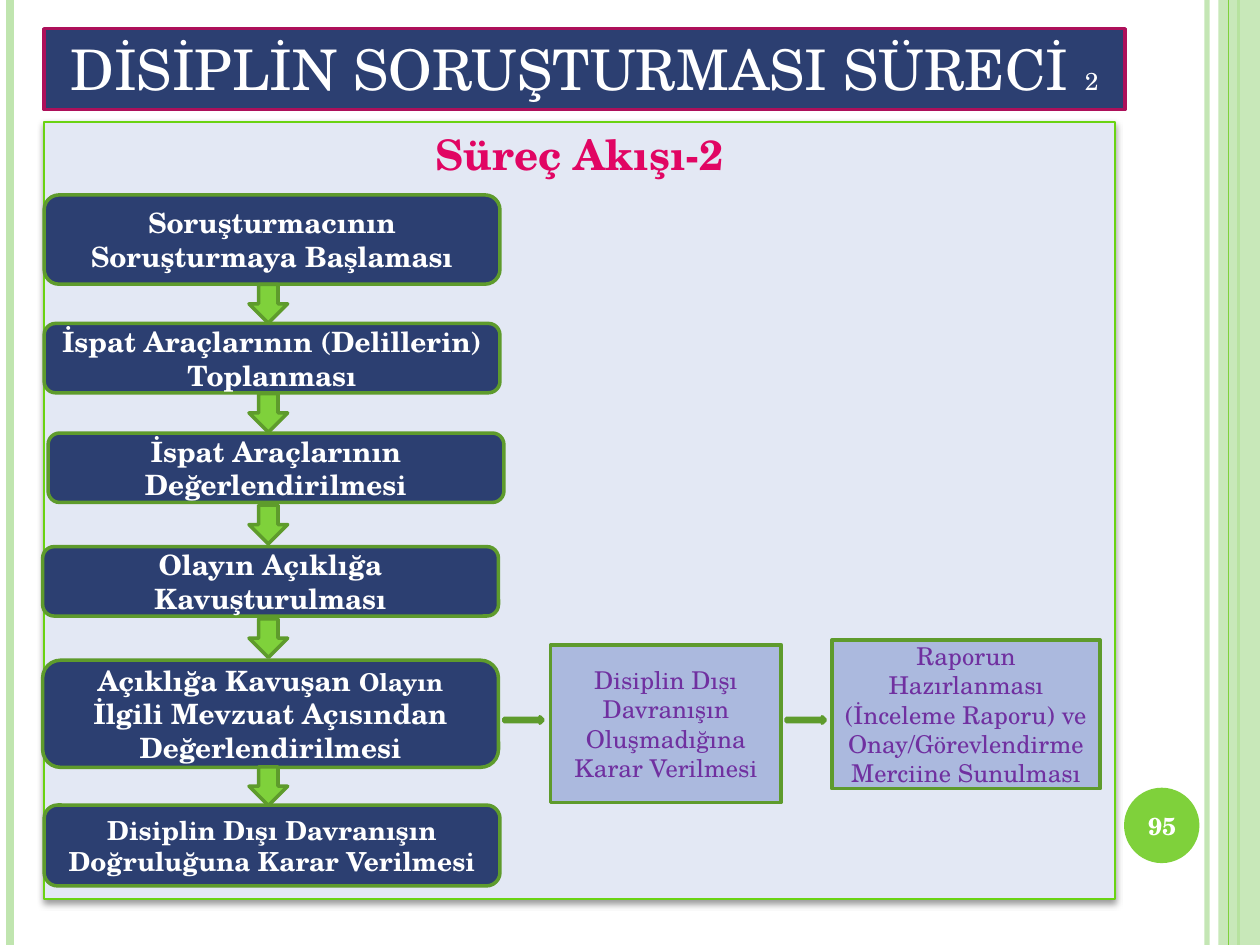
import pptx
import pptx.util
import pptx.dml.color
import pptx.enum.shapes
import pptx.enum.text
import pptx.oxml
import pptx.oxml.ns

Cm, Pt = pptx.util.Cm, pptx.util.Pt
SHAPE = pptx.enum.shapes.MSO_SHAPE
ANCHOR = pptx.enum.text.MSO_ANCHOR
FONT = "TeX Gyre Schola"
COLORS = {
    "white": "FFFFFF", "navy": "2C3F71", "green": "7FD13B", "pale_green": "C0E5AF",
    "dark_green": "5E9B2C", "bright_green": "6AD312", "panel": "E3E8F4",
    "crimson": "AD105A", "pink": "E10563", "light_blue": "ABB9DE", "purple": "7030A0",
}
NS = 'xmlns:a="http://schemas.openxmlformats.org/drawingml/2006/main"'


def rgb(name):
    return pptx.dml.color.RGBColor.from_string(COLORS[name])


def set_alpha(element, percent):
    color = element.find(".//" + pptx.oxml.ns.qn("a:srgbClr"))
    color.append(pptx.oxml.parse_xml(f'<a:alpha {NS} val="{percent * 1000}"/>'))


def add_box(page, kind, box, fill, line=None, width=2):
    shape = page.shapes.add_shape(kind, *(Cm(value) for value in box))
    shape.shadow.inherit = False
    shape.fill.solid()
    shape.fill.fore_color.rgb = rgb(fill)
    if line:
        shape.line.color.rgb = rgb(line)
        shape.line.width = Pt(width)
    else:
        shape.line.fill.background()
    return shape


def write(shape, spans, color, bold=False, anchor=ANCHOR.MIDDLE):
    """Fill a shape with one centred paragraph of (text, size) spans."""
    frame = shape.text_frame
    frame.word_wrap = True
    frame.vertical_anchor = anchor
    para = frame.paragraphs[0]
    para.alignment = pptx.enum.text.PP_ALIGN.CENTER
    for text, size in spans:
        span = para.add_run()
        span.text = text
        span.font.name = FONT
        span.font.size = Pt(size)
        span.font.bold = bold
        span.font.color.rgb = rgb(color)


def add_rule(page, x, height, color, width):
    rule = page.shapes.add_connector(
        pptx.enum.shapes.MSO_CONNECTOR.STRAIGHT, Cm(x), 0, Cm(x), Cm(height))
    rule.line.color.rgb = rgb(color)
    rule.line.width = Pt(width)
    rule._element.spPr.append(pptx.oxml.parse_xml(f"<a:effectLst {NS}/>"))
    return rule


def add_frame(page, width, height):
    """Vertical rules and band along the page edges."""
    set_alpha(add_rule(page, width - 1.07, height, "pale_green", 3)._element, 93)
    add_rule(page, 0.2, height, "pale_green", 4.5)
    add_rule(page, width - 0.43, height, "green", 1.5)
    band = add_box(page, SHAPE.RECTANGLE, (width - 0.84, 0, 0.84, height), "pale_green")
    set_alpha(band._element, 87)
    add_rule(page, width - 0.64, height, "green", 0.75)


def add_page_number(page, box, number):
    add_box(page, SHAPE.OVAL, box, "green")
    left, top, width, height = box
    label = page.shapes.add_textbox(Cm(left - 0.08), Cm(top + 0.04),
                                    Cm(width + 0.18), Cm(height - 0.08))
    write(label, [(number, 14)], "white", bold=True)


def add_title(page, box):
    title = add_box(page, SHAPE.RECTANGLE, box, "navy", "crimson")
    write(title, [("DİSİPLİN SORUŞTURMASI SÜRECİ ", 32), ("2", 14)], "white",
          anchor=ANCHOR.TOP)


def add_panel(page, box):
    panel = add_box(page, SHAPE.RECTANGLE, box, "panel", "bright_green", 1)
    write(panel, [("Süreç Akışı-2", 24)], "pink", bold=True, anchor=ANCHOR.TOP)
    effects = panel._element.spPr.find(pptx.oxml.ns.qn("a:effectLst"))
    effects.append(pptx.oxml.parse_xml(
        f'<a:outerShdw {NS} blurRad="{Pt(4)}" dist="{Pt(2)}" dir="5400000" '
        'rotWithShape="0"><a:srgbClr val="000000"><a:alpha val="40000"/>'
        '</a:srgbClr></a:outerShdw>'))


def add_steps(page, box):
    """Column of process steps with a down arrow centred in each gap."""
    left, top = box[:2]
    arrow_size, arrow_center = 0.78, 4.52
    steps = [  # x offset, y offset, height, spans
        (0, 1.47, 1.8, [("Soruşturmacının Soruşturmaya Başlaması", 16)]),
        (0, 4.06, 1.4, [("İspat Araçlarının (Delillerin) Toplanması", 16)]),
        (0.08, 6.27, 1.4, [("İspat Araçlarının Değerlendirilmesi", 16)]),
        (-0.03, 8.56, 1.4, [("Olayın Açıklığa Kavuşturulması", 16)]),
        (-0.03, 10.85, 2.16, [("Açıklığa Kavuşan ", 16), ("Olayın", 14),
                              (" İlgili Mevzuat Açısından Değerlendirilmesi", 16)]),
        (0, 13.77, 1.63, [("Disiplin Dışı Davranışın Doğruluğuna Karar Verilmesi", 15)]),
    ]
    previous_bottom = None
    for x, y, height, spans in steps:
        step = add_box(page, SHAPE.ROUNDED_RECTANGLE, (left + x, top + y, 9.19, height),
                       "navy", "dark_green")
        write(step, spans, "white", bold=True)
        if previous_bottom is not None:
            middle = (previous_bottom + y) / 2
            add_box(page, SHAPE.DOWN_ARROW,
                    (left + arrow_center - arrow_size / 2, top + middle - arrow_size / 2,
                     arrow_size, arrow_size), "green", "dark_green")
        previous_bottom = y + height


def add_outcomes(page, box):
    """Side branch: each outcome follows a thin right arrow."""
    left, top = box[:2]
    outcomes = [  # arrow x, then outcome x, y, width, height, text
        (9.27, 10.21, 10.54, 4.65, 3.18,
         "Disiplin Dışı Davranışın Oluşmadığına Karar Verilmesi"),
        (14.96, 15.88, 10.44, 5.41, 3.0,
         "Raporun Hazırlanması (İnceleme Raporu) ve Onay/Görevlendirme "
         "Merciine Sunulması"),
    ]
    for arrow_x, x, y, width, height, text in outcomes:
        add_box(page, SHAPE.RIGHT_ARROW, (left + arrow_x, top + 11.99, 0.79, 0.13),
                "green", "dark_green")
        outcome = add_box(page, SHAPE.RECTANGLE, (left + x, top + y, width, height),
                          "light_blue", "dark_green")
        write(outcome, [(text, 14)], "purple")


def main():
    width, height = 25.4, 19.05
    deck = pptx.Presentation()
    deck.slide_width, deck.slide_height = Cm(width), Cm(height)
    page = deck.slides.add_slide(deck.slide_layouts[6])
    panel_box = (0.89, 2.46, 21.59, 15.67)

    add_frame(page, width, height)
    add_page_number(page, (22.66, 15.88, 1.52, 1.52), "95")
    add_title(page, (0.89, 0.58, 21.79, 1.63))
    add_panel(page, panel_box)
    add_steps(page, panel_box)
    add_outcomes(page, panel_box)
    deck.save("out.pptx")


if __name__ == "__main__":
    main()
